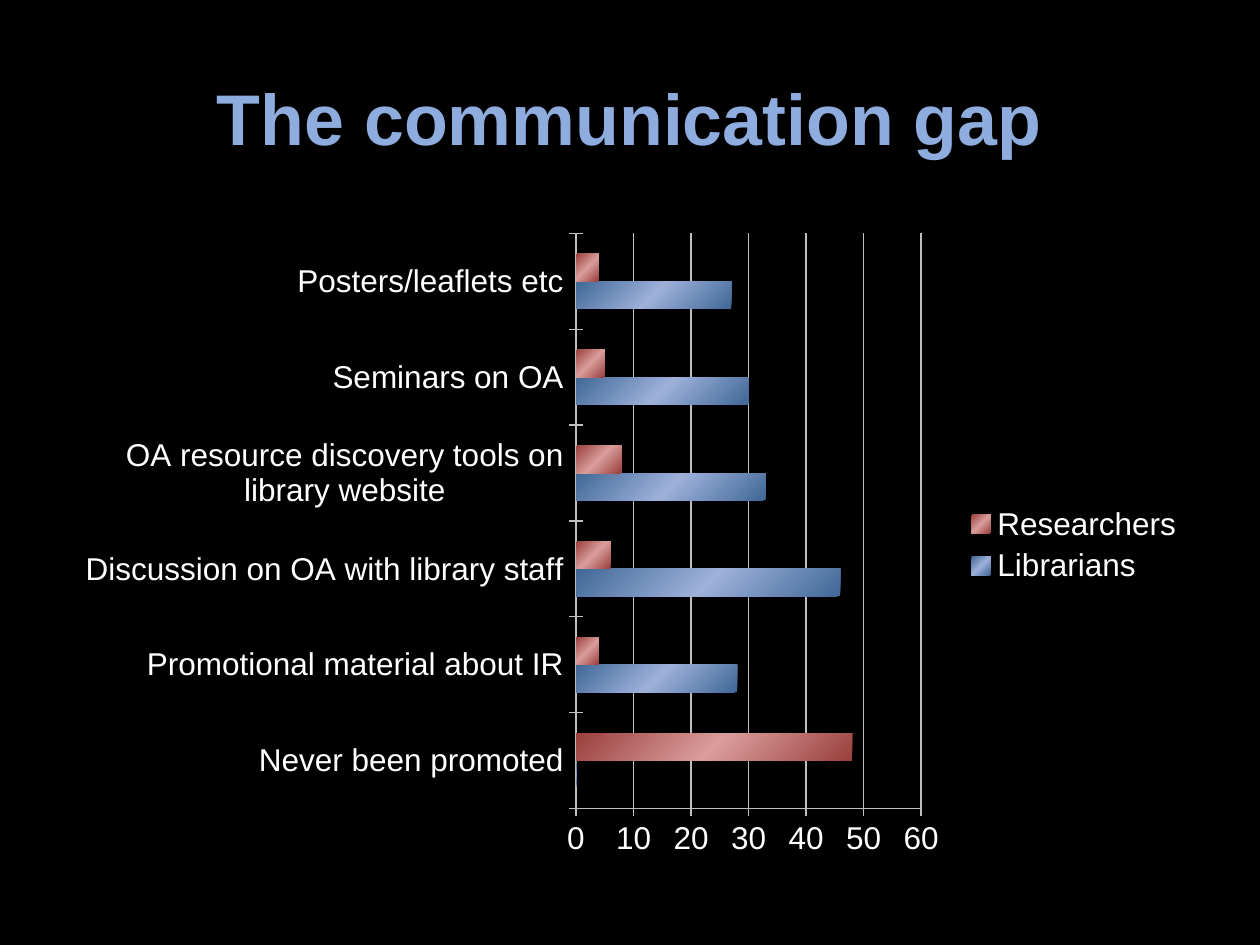
from dataclasses import dataclass

from lxml import etree
from pptx import Presentation
from pptx.chart.data import CategoryChartData
from pptx.dml.color import RGBColor
from pptx.enum.chart import XL_CHART_TYPE, XL_LEGEND_POSITION, XL_TICK_MARK
from pptx.enum.text import MSO_ANCHOR, PP_ALIGN
from pptx.oxml.ns import qn
from pptx.util import Inches, Pt

BAR_CLUSTERED = XL_CHART_TYPE.BAR_CLUSTERED
LEGEND_RIGHT = XL_LEGEND_POSITION.RIGHT
TICK_CROSS = XL_TICK_MARK.CROSS
TICK_NONE = XL_TICK_MARK.NONE
MIDDLE = MSO_ANCHOR.MIDDLE
CENTER = PP_ALIGN.CENTER

FONT = "Arial"
BLACK = "000000"
WHITE = "FFFFFF"
TITLE_BLUE = "8FACDE"
LINE_GREY = "BFBFBF"

CATEGORIES = [
    "Never been promoted",
    "Promotional material about IR",
    "Discussion on OA with library staff",
    "OA resource discovery tools on library website",
    "Seminars on OA",
    "Posters/leaflets etc",
]


@dataclass
class BarSeries:
    name: str
    values: list[int]
    edge: str
    middle: str


SERIES = [
    BarSeries("Librarians", [0, 28, 46, 33, 30, 27], "416897", "9DB1DA"),
    BarSeries("Researchers", [48, 4, 6, 8, 5, 4], "9A403E", "DA9D9B"),
]


def color(value: str) -> RGBColor:
    return RGBColor.from_string(value)


def style_font(font, size: float, value: str, bold: bool = False) -> None:
    font.name = FONT
    font.size = Pt(size)
    font.bold = bold
    font.color.rgb = color(value)


def style_line(line) -> None:
    line.color.rgb = color(LINE_GREY)
    line.width = Pt(0.75)


def fill_with_sheen(series, edge: str, middle: str) -> None:
    """Diagonal gradient, dark at both ends and light in the middle."""
    fill = series.format.fill
    fill.gradient()
    fill.gradient_angle = 315
    stops = series._element.find(".//" + qn("a:gsLst"))
    for stop in list(stops):
        stops.remove(stop)
    for position, value in ((0, edge), (50, middle), (100, edge)):
        stop = etree.SubElement(stops, qn("a:gs"), pos=str(position * 1000))
        etree.SubElement(stop, qn("a:srgbClr"), val=value)


def add_title(slide, text: str) -> None:
    title = slide.shapes.title
    title.left, title.top = Inches(0.5), Inches(0.3)
    title.width, title.height = Inches(9), Inches(1.25)
    text_frame = title.text_frame
    text_frame.text = text
    text_frame.vertical_anchor = MIDDLE
    paragraph = text_frame.paragraphs[0]
    paragraph.alignment = CENTER
    style_font(paragraph.runs[0].font, 41, TITLE_BLUE, bold=True)


def add_bar_chart(slide) -> None:
    chart_data = CategoryChartData()
    chart_data.categories = CATEGORIES
    for item in SERIES:
        chart_data.add_series(item.name, item.values)
    chart = slide.shapes.add_chart(
        BAR_CLUSTERED, Inches(0.5), Inches(1.75), Inches(9), Inches(5.15), chart_data
    ).chart
    chart.has_title = False
    style_font(chart.font, 18, WHITE)

    # Bars
    plot = chart.plots[0]
    plot.gap_width = 150
    plot.overlap = 0
    plot.vary_by_categories = False
    for series, item in zip(plot.series, SERIES):
        fill_with_sheen(series, item.edge, item.middle)

    # Axes and gridlines
    for axis in (chart.category_axis, chart.value_axis):
        axis.major_tick_mark = TICK_CROSS
        axis.minor_tick_mark = TICK_NONE
        style_line(axis.format.line)
    value_axis = chart.value_axis
    value_axis.minimum_scale = 0
    value_axis.maximum_scale = 60
    value_axis.major_unit = 10
    value_axis.has_major_gridlines = True
    style_line(value_axis.major_gridlines.format.line)

    # Legend
    chart.has_legend = True
    chart.legend.position = LEGEND_RIGHT
    chart.legend.include_in_layout = False


def main() -> None:
    presentation = Presentation()
    presentation.slide_width = Inches(10)
    presentation.slide_height = Inches(7.5)
    title_only = presentation.slide_layouts[5]
    slide = presentation.slides.add_slide(title_only)
    background = slide.background.fill
    background.solid()
    background.fore_color.rgb = color(BLACK)

    add_title(slide, "The communication gap")
    add_bar_chart(slide)
    presentation.save("out.pptx")


if __name__ == "__main__":
    main()
